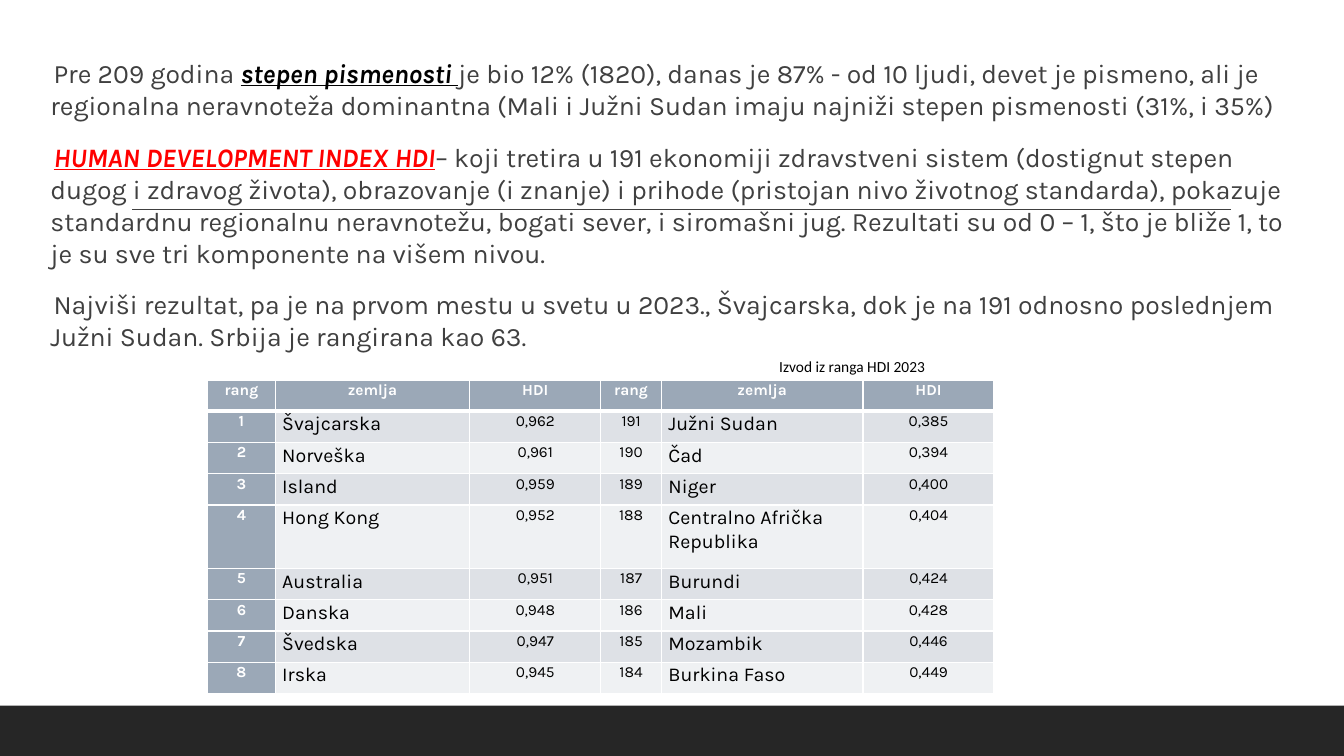
from lxml.etree import SubElement
from pptx import Presentation
from pptx.dml.color import RGBColor
from pptx.enum.shapes import MSO_CONNECTOR, MSO_SHAPE
from pptx.enum.text import MSO_ANCHOR, PP_ALIGN
from pptx.oxml.ns import qn
from pptx.util import Inches, Pt

THEME = {
    "font": "Karla", "caption_font": "Calibri",
    "body_size": 19, "country_size": 14, "small_size": 11,
    "text": "404040", "black": "000000", "white": "FFFFFF", "red": "FF0000",
    "bar": "262626", "accent": "9BA8B7", "bands": ("DEE1E6", "EFF1F3"),
}

# Each span: text, theme colour, emphasised
PARAGRAPHS = [
    [("Pre 209 godina ", "text", False),
     ("stepen pismenosti ", "black", True),
     ("je bio 12% (1820), danas je 87% - od 10 ljudi, devet je pismeno, ali je "
      "regionalna neravnoteža dominantna (Mali i Južni Sudan imaju najniži stepen "
      "pismenosti (31%, i 35%)", "text", False)],
    [("HUMAN DEVELOPMENT INDEX HDI", "red", True),
     ("– koji tretira u 191 ekonomiji zdravstveni sistem (dostignut stepen dugog i "
      "zdravog života), obrazovanje (i znanje) i prihode (pristojan nivo životnog "
      "standarda), pokazuje standardnu regionalnu neravnotežu, bogati sever, i "
      "siromašni jug. Rezultati su od 0 – 1, što je bliže 1, to je su sve tri "
      "komponente na višem nivou.", "text", False)],
    [("Najviši rezultat, pa je na prvom mestu u svetu u 2023., Švajcarska, dok je na "
      "191 odnosno poslednjem Južni Sudan. Srbija je rangirana kao 63.", "text", False)],
]
CAPTION = "Izvod iz ranga HDI 2023"
HEADER = ("rang", "zemlja", "HDI") * 2
RANKING = [
    ("1", "Švajcarska", "0,962", "191", "Južni Sudan", "0,385"),
    ("2", "Norveška", "0,961", "190", "Čad", "0,394"),
    ("3", "Island", "0,959", "189", "Niger", "0,400"),
    ("4", "Hong Kong", "0,952", "188", "Centralno Afrička Republika", "0,404"),
    ("5", "Australia", "0,951", "187", "Burundi", "0,424"),
    ("6", "Danska", "0,948", "186", "Mali", "0,428"),
    ("7", "Švedska", "0,947", "185", "Mozambik", "0,446"),
    ("8", "Irska", "0,945", "184", "Burkina Faso", "0,449"),
]
COLUMN_WIDTHS = (0.67, 1.93, 1.3, 0.6, 2, 1.3)
COUNTRY_COLUMNS = (1, 4)
ROW_HEIGHT, TALL_ROW_HEIGHT, TALL_ROW = 0.31, 0.63, 4


def rgb(name):
    return RGBColor.from_string(THEME.get(name, name))


def style(font, size, color, bold=False, face="font"):
    font.name = THEME[face]
    font.size = Pt(THEME[size])
    font.color.rgb = rgb(color)
    font.bold = bold


def add_bottom_bar(page):
    bar = page.shapes.add_shape(MSO_SHAPE.RECTANGLE, 0, Inches(7), Inches(13.33), Inches(0.5))
    bar.shadow.inherit = False
    bar.fill.solid()
    bar.fill.fore_color.rgb = rgb("bar")
    bar.line.fill.background()


def add_rule(page):
    rule = page.shapes.add_connector(
        MSO_CONNECTOR.STRAIGHT, Inches(1.31), Inches(2.08), Inches(12.21), Inches(2.08))
    rule.line.color.rgb = rgb("text")
    rule.line.width = Pt(1)
    SubElement(rule._element.spPr, qn("a:effectLst"))


def add_blank_bullet(para):
    """Hang the paragraph on a space used as its bullet."""
    props = para._p.get_or_add_pPr()
    props.set("marL", str(Inches(0.1)))
    props.set("indent", str(-Inches(0.1)))
    bullet_color = SubElement(props, qn("a:buClr"))
    SubElement(bullet_color, qn("a:srgbClr"), val=THEME["accent"])
    SubElement(props, qn("a:buChar"), char=" ")


def add_body(page):
    box = page.shapes.add_textbox(Inches(0.4), Inches(0.52), Inches(12.34), Inches(3.12))
    frame = box.text_frame
    frame.word_wrap = True
    frame.margin_left = frame.margin_right = 0
    for index, spans in enumerate(PARAGRAPHS):
        para = frame.add_paragraph() if index else frame.paragraphs[0]
        add_blank_bullet(para)
        para.space_before = Pt(12 if index else 0)
        para.space_after = Pt(2)
        for text, color, emphasised in spans:
            span = para.add_run()
            span.text = text
            style(span.font, "body_size", color, emphasised)
            span.font.italic = span.font.underline = emphasised


def set_borders(cell, top=1, bottom=1):
    props = cell._tc.get_or_add_tcPr()
    for side, width in (("L", 1), ("R", 1), ("T", top), ("B", bottom)):
        line = SubElement(props, qn(f"a:ln{side}"), w=str(Pt(width)))
        fill = SubElement(line, qn("a:solidFill"))
        SubElement(fill, qn("a:srgbClr"), val=THEME["white"])


def fill_cell(cell, text, row, column):
    is_label = row == 0 or column == 0
    is_country = row > 0 and column in COUNTRY_COLUMNS
    set_borders(cell, top=3 if row == 1 else 1, bottom=3 if row == 0 else 1)
    cell.fill.solid()
    cell.fill.fore_color.rgb = rgb("accent" if is_label else THEME["bands"][(row - 1) % 2])
    cell.margin_left = cell.margin_right = Inches(0.07)
    cell.margin_top = cell.margin_bottom = 0
    para = cell.text_frame.paragraphs[0]
    para.text = text
    para.line_spacing = 1.07
    para.alignment = PP_ALIGN.LEFT if is_country else PP_ALIGN.CENTER
    style(para.runs[0].font, "country_size" if is_country else "small_size",
          "white" if is_label else "black", is_label)


def add_ranking(page):
    rows = [HEADER] + RANKING
    heights = [TALL_ROW_HEIGHT if row == TALL_ROW else ROW_HEIGHT for row in range(len(rows))]
    table = page.shapes.add_table(
        len(rows), len(HEADER), Inches(2.06), Inches(3.77),
        Inches(sum(COLUMN_WIDTHS)), Inches(sum(heights))).table
    for column, width in enumerate(COLUMN_WIDTHS):
        table.columns[column].width = Inches(width)
    for row, values in enumerate(rows):
        table.rows[row].height = Inches(heights[row])
        for column, text in enumerate(values):
            fill_cell(table.cell(row, column), text, row, column)


def add_caption(page):
    box = page.shapes.add_textbox(Inches(7.63), Inches(3.49), Inches(3.09), Inches(0.29))
    frame = box.text_frame
    frame.word_wrap = True
    frame.vertical_anchor = MSO_ANCHOR.MIDDLE
    frame.text = CAPTION
    style(frame.paragraphs[0].runs[0].font, "small_size", "black", face="caption_font")


def main():
    deck = Presentation()
    deck.slide_width, deck.slide_height = Inches(13.33), Inches(7.5)
    page = deck.slides.add_slide(deck.slide_layouts[6])
    add_bottom_bar(page)
    add_rule(page)
    add_body(page)
    add_ranking(page)
    add_caption(page)
    deck.save("out.pptx")


if __name__ == "__main__":
    main()
